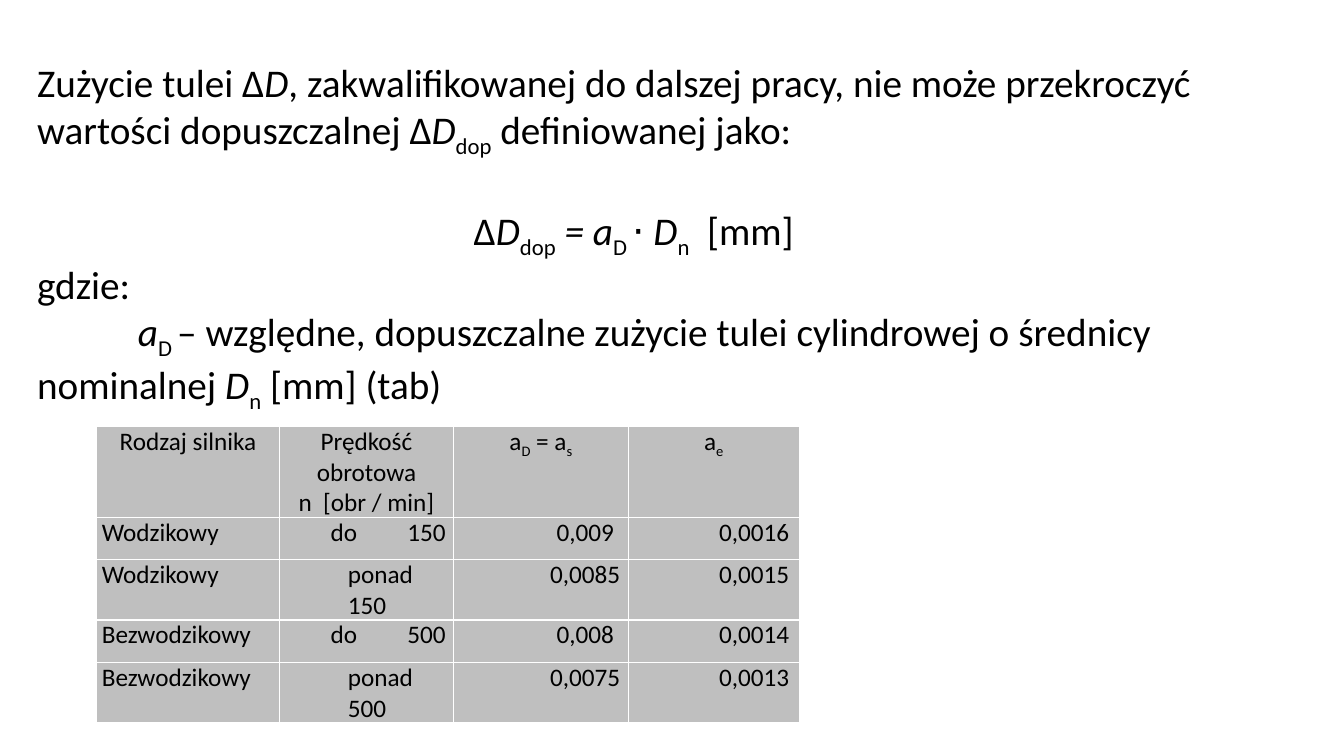
from lxml import etree
from pptx import Presentation, util as u
from pptx.dml.color import RGBColor
from pptx.enum import text
from pptx.oxml.ns import qn

BLACK = RGBColor(0x00, 0x00, 0x00)
WHITE = RGBColor(0xFF, 0xFF, 0xFF)
GREY = RGBColor(0xBF, 0xBF, 0xBF)
FONT = "Calibri"
PLAIN, ITALIC, SUB = "plain", "italic", "sub"

# Each paragraph: first-line indent, space before, runs
BODY = [
    (0, 0, [("Zużycie tulei Δ", PLAIN), ("D", ITALIC),
            (", zakwalifikowanej do dalszej pracy, nie może przekroczyć "
             "wartości dopuszczalnej Δ", PLAIN),
            ("D", ITALIC), ("dop", SUB), (" definiowanej jako:", PLAIN)]),
    (4.33, 34, [("Δ", PLAIN), ("D", ITALIC), ("dop", SUB), (" = a", ITALIC),
                ("D ", SUB), ("⋅ ", PLAIN), ("D", ITALIC), ("n", SUB),
                ("  [mm]", PLAIN)]),
    (0, 0, [("gdzie:", PLAIN)]),
    (1, 0, [("a", ITALIC), ("D ", SUB),
            ("– względne, dopuszczalne zużycie tulei cylindrowej o średnicy "
             "nominalnej ", PLAIN),
            ("D", ITALIC), ("n", SUB), (" [mm] (tab)", PLAIN)]),
]

HEADER = [
    [[("Rodzaj silnika", PLAIN)]],
    [[("Prędkość obrotowa", PLAIN)], [("n  [obr / min]", PLAIN)]],
    [[("a", PLAIN), ("D", SUB), (" = a", PLAIN), ("s", SUB)]],
    [[("a", PLAIN), ("e", SUB)]],
]
ENGINES = [
    ("Wodzikowy", "\tdo\t150", "0,009", "0,0016"),
    ("Wodzikowy", "ponad 150", "0,0085", "0,0015"),
    ("Bezwodzikowy", "\tdo\t500", "0,008", "0,0014"),
    ("Bezwodzikowy", "ponad 500", "0,0075", "0,0013"),
]
COLUMNS = [1.81, 1.73, 1.73, 1.7]
ROWS = [0.84] + [0.42] * len(ENGINES)
VALUE_INDENTS = [0, 0.63, 0.88, 0.8]
SPEED_TABS = [(0.46, "l"), (1.6, "r")]


def write_runs(p, runs, size):
    p.font.size, p.font.name = u.Pt(size), FONT
    p.font.color.rgb = BLACK
    for words, style in runs:
        r = p.add_run()
        r.text = words
        r.font.size, r.font.name = u.Pt(size), FONT
        r.font.color.rgb = BLACK
        if style == ITALIC:
            r.font.italic = True
        elif style == SUB:
            r.font._element.set("baseline", "-25000")


def paragraph(tf, index):
    return tf.paragraphs[0] if index == 0 else tf.add_paragraph()


def indent(p, margin, first_line=0):
    pPr = p._p.get_or_add_pPr()
    pPr.set("marL", str(u.Inches(margin)))
    pPr.set("indent", str(u.Inches(first_line)))


def set_tabs(p, stops):
    tabs = etree.SubElement(p._p.get_or_add_pPr(), qn("a:tabLst"))
    for position, side in stops:
        etree.SubElement(tabs, qn("a:tab"), pos=str(u.Inches(position)), algn=side)


def format_cell(cell):
    """Set insets, white one-point borders and grey fill."""
    cell.margin_left = cell.margin_right = u.Inches(0.05)
    cell.margin_top = cell.margin_bottom = 0
    tcPr = cell._tc.get_or_add_tcPr()
    for side in ("lnL", "lnR", "lnT", "lnB"):
        ln = etree.SubElement(tcPr, qn("a:" + side), w=str(u.Pt(1)))
        fill = etree.SubElement(ln, qn("a:solidFill"))
        etree.SubElement(fill, qn("a:srgbClr"), val=str(WHITE))
    cell.fill.solid()
    cell.fill.fore_color.rgb = GREY


def add_body(s, left, top, width, height):
    tf = s.shapes.add_textbox(*map(u.Inches, (left, top, width, height))).text_frame
    tf.word_wrap = True
    for i, (first_line, before, runs) in enumerate(BODY):
        p = paragraph(tf, i)
        indent(p, 0, first_line)
        p.space_before = u.Pt(before)
        write_runs(p, runs, 28)


def add_wear_table(s, left, top):
    box = map(u.Inches, (left, top, sum(COLUMNS), sum(ROWS)))
    table = s.shapes.add_table(len(ROWS), len(COLUMNS), *box).table
    table.first_row = table.horz_banding = False
    for column, width in zip(table.columns, COLUMNS):
        column.width = u.Inches(width)
    for row, height in zip(table.rows, ROWS):
        row.height = u.Inches(height)
    for cell in table.iter_cells():
        format_cell(cell)

    for c, lines in enumerate(HEADER):
        for i, runs in enumerate(lines):
            p = paragraph(table.cell(0, c).text_frame, i)
            p.alignment = text.PP_ALIGN.CENTER
            write_runs(p, runs, 18)

    for r, engine in enumerate(ENGINES, 1):
        for c, value in enumerate(engine):
            p = table.cell(r, c).text_frame.paragraphs[0]
            p.alignment = text.PP_ALIGN.LEFT if c < 2 else text.PP_ALIGN.CENTER
            p.space_before = p.space_after = u.Pt(1.5)
            if "\t" in value:
                set_tabs(p, SPEED_TABS)
            else:
                indent(p, VALUE_INDENTS[c])
            write_runs(p, [(value, PLAIN)], 18)


def main():
    prs = Presentation()
    prs.slide_width, prs.slide_height = u.Inches(13.33), u.Inches(7.5)
    s = prs.slides.add_slide(prs.slide_layouts[6])
    add_body(s, 0.27, 0.53, 12.69, 3.4)
    add_wear_table(s, 0.96, 4.23)
    prs.save("out.pptx")


if __name__ == "__main__":
    main()
